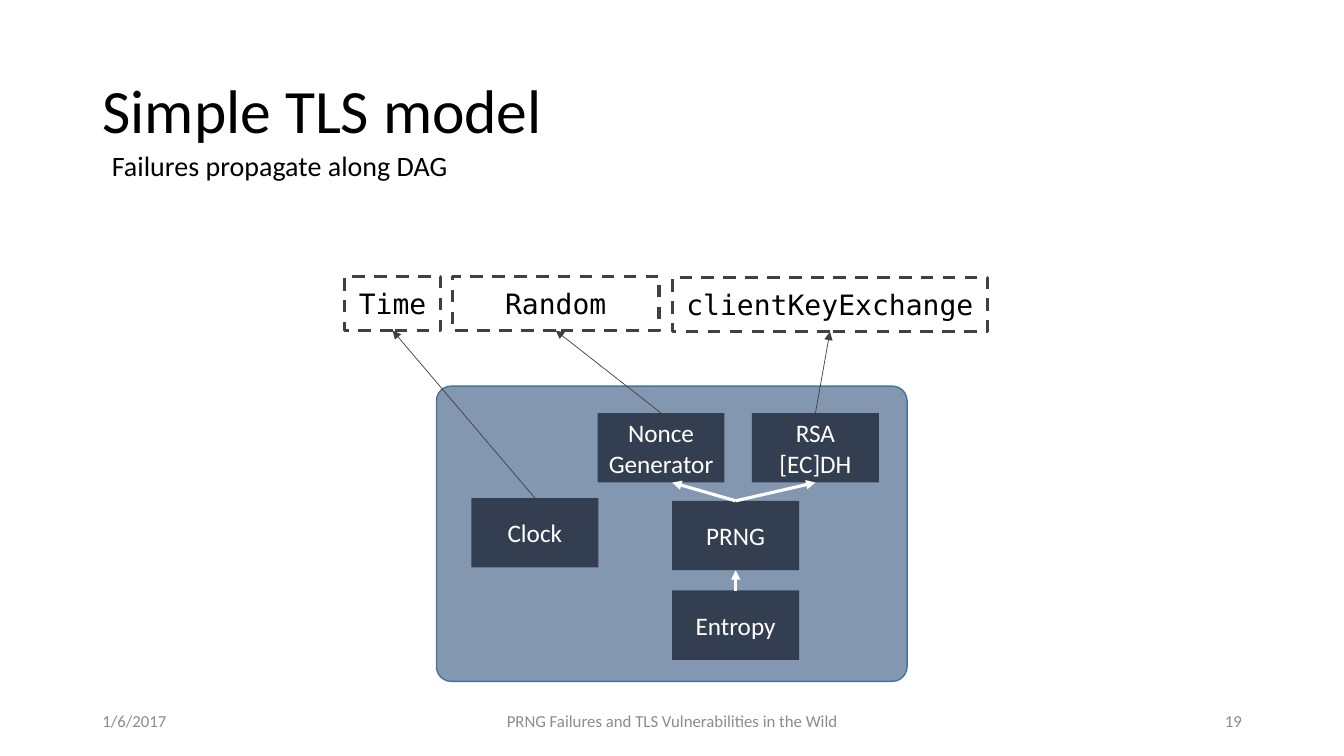
import pptx
import pptx.util
import pptx.dml.color
import pptx.enum.dml
import pptx.enum.shapes
import pptx.enum.text
import pptx.oxml
import pptx.oxml.ns
from lxml import etree

Cm = pptx.util.Cm
Pt = pptx.util.Pt
Shape = pptx.enum.shapes.MSO_SHAPE
Align = pptx.enum.text.PP_ALIGN
Anchor = pptx.enum.text.MSO_ANCHOR

COLORS = {
    "black": "000000",
    "white": "FFFFFF",
    "gray": "8C8C8C",
    "dark": "404040",
    "panel": "8497B0",
    "edge": "43739E",
    "box": "333F50",
}


def color(name):
    return pptx.dml.color.RGBColor.from_string(COLORS[name])


def write(shape, text, size=18, font="Calibri", ink="black",
          align=Align.LEFT, anchor=Anchor.MIDDLE, space=None):
    frame = shape.text_frame
    frame.word_wrap = True
    frame.auto_size = pptx.enum.text.MSO_AUTO_SIZE.NONE
    frame.vertical_anchor = anchor
    frame.text = text
    for para in frame.paragraphs:
        para.alignment = align
        para.line_spacing = space
        for run in para.runs:
            run.font.size = Pt(size)
            run.font.name = font
            run.font.color.rgb = color(ink)


class Canvas:
    sans = "Calibri"
    mono = "DejaVu Sans Mono"

    def __init__(self, slide):
        self.slide = slide
        self.shapes = slide.shapes

    def title(self, text, left, top, width, height):
        shape = self.shapes.title
        shape.left, shape.top = Cm(left), Cm(top)
        shape.width, shape.height = Cm(width), Cm(height)
        write(shape, text, size=44, font=self.sans, space=0.9)

    def label(self, text, left, top, width, height, **style):
        shape = self.shapes.add_textbox(Cm(left), Cm(top), Cm(width), Cm(height))
        write(shape, text, font=self.sans, **style)

    def block(self, kind, left, top, width, height):
        shape = self.shapes.add_shape(kind, Cm(left), Cm(top), Cm(width), Cm(height))
        shape.shadow.inherit = False
        return shape

    def panel(self, left, top, width, height):
        shape = self.block(Shape.ROUNDED_RECTANGLE, left, top, width, height)
        shape.adjustments[0] = 0.05
        shape.fill.solid()
        shape.fill.fore_color.rgb = color("panel")
        shape.line.color.rgb = color("edge")
        shape.line.width = Pt(1)

    def field(self, text, left, top, width):
        shape = self.block(Shape.RECTANGLE, left, top, width, 1.37)
        shape.fill.background()
        shape.line.color.rgb = color("dark")
        shape.line.width = Pt(2.25)
        shape.line.dash_style = pptx.enum.dml.MSO_LINE.DASH
        write(shape, text, size=20, font=self.mono, align=Align.CENTER)
        return shape

    def box(self, text, left, top):
        shape = self.block(Shape.RECTANGLE, left, top, 3.2, 1.75)
        shape.fill.solid()
        shape.fill.fore_color.rgb = color("box")
        shape.line.fill.background()
        write(shape, text, font=self.sans, ink="white", align=Align.CENTER)
        return shape

    def arrow(self, start, goal, ink, width, shift=0):
        line = self.shapes.add_connector(
            pptx.enum.shapes.MSO_CONNECTOR.STRAIGHT,
            start.left + start.width // 2, start.top,
            goal.left + goal.width // 2 + Cm(shift), goal.top + goal.height)
        line.begin_connect(start, 0)
        if not shift:
            line.end_connect(goal, 2)
        line.line.color.rgb = color(ink)
        line.line.width = Pt(width)
        qn = pptx.oxml.ns.qn
        props = line.line._get_or_add_ln()
        etree.SubElement(props, qn("a:tailEnd"), type="triangle")
        etree.SubElement(props.getparent(), qn("a:effectLst"))


def main():
    deck = pptx.Presentation()
    deck.slide_width, deck.slide_height = Cm(33.87), Cm(19.05)
    page = Canvas(deck.slides.add_slide(deck.slide_layouts[5]))

    page.title("Simple TLS model", 2.33, 1.02, 29.21, 3.68)
    page.label("Failures propagate along DAG", 2.57, 3.63, 28.98, 1.12,
               size=20, anchor=Anchor.TOP)

    for text, left, width, align in (
        ("1/6/2017", 2.33, 7.62, Align.LEFT),
        ("PRNG Failures and TLS Vulnerabilities in the Wild", 11.23, 11.43, Align.CENTER),
        ("19", 23.93, 7.62, Align.RIGHT),
    ):
        page.label(text, left, 17.65, width, 1.02, size=12, ink="gray", align=align)

    time = page.field("Time", 8.69, 6.96, 2.41)
    random = page.field("Random", 11.4, 6.96, 5.21)
    key = page.field("clientKeyExchange", 16.94, 6.99, 7.95)

    page.panel(11, 9.73, 11.86, 7.44)
    clock = page.box("Clock", 11.88, 12.55)
    prng = page.box("PRNG", 16.94, 12.62)
    seed = page.box("Entropy", 16.94, 14.88)
    nonce = page.box("Nonce\nGenerator", 15.06, 10.41)
    rsa = page.box("RSA\n[EC]DH", 18.95, 10.41)

    page.arrow(seed, prng, "white", 2.25)
    page.arrow(prng, nonce, "white", 2.25, shift=0.28)
    page.arrow(prng, rsa, "white", 2.25)
    for start, goal in ((clock, time), (nonce, random), (rsa, key)):
        page.arrow(start, goal, "dark", 0.5)

    deck.save("out.pptx")


if __name__ == "__main__":
    main()
